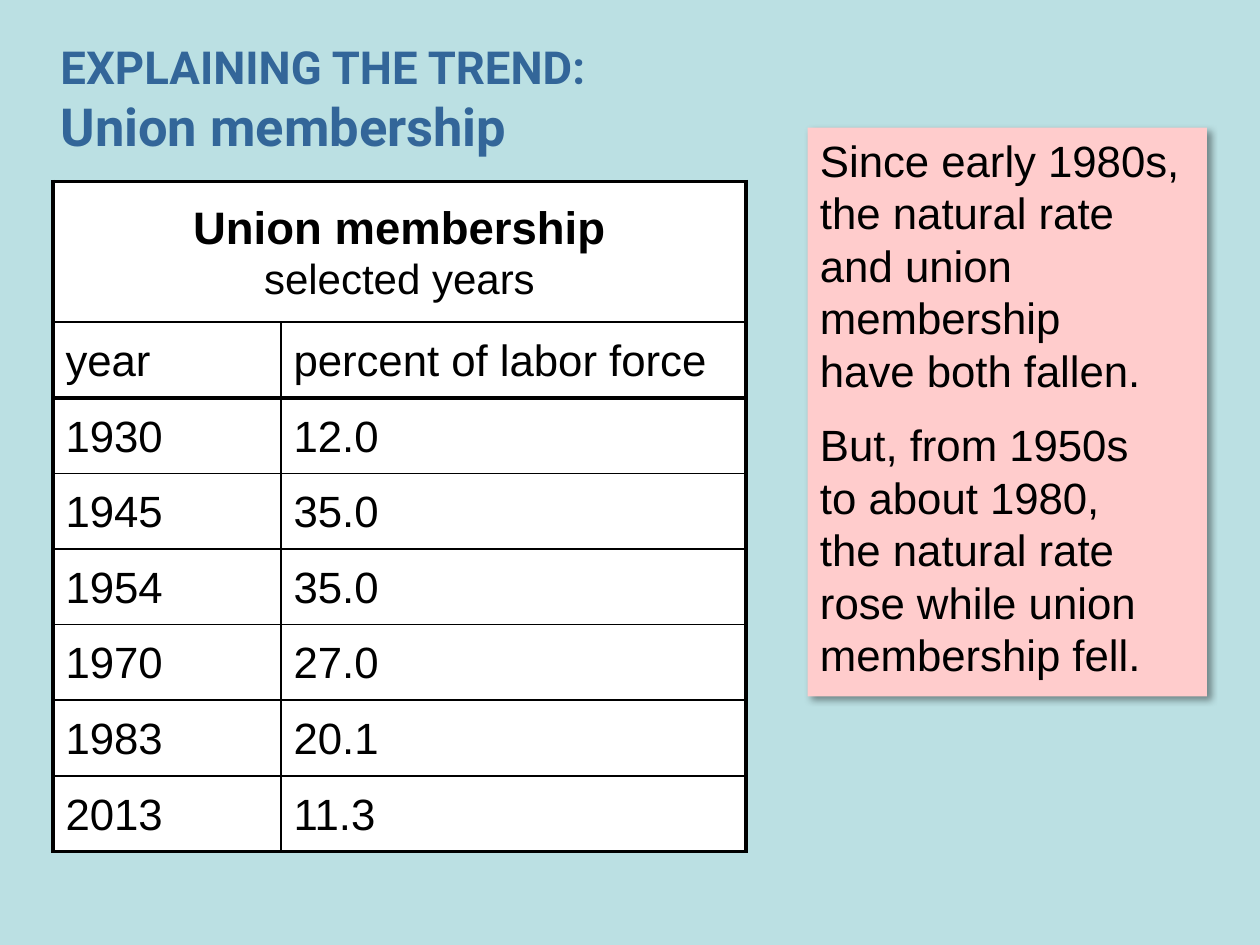
from lxml.etree import SubElement
from pptx import Presentation
from pptx.dml.color import RGBColor
from pptx.enum.shapes import MSO_SHAPE
from pptx.enum.text import MSO_ANCHOR, PP_ALIGN
from pptx.oxml import parse_xml
from pptx.oxml.ns import nsdecls, qn
from pptx.util import Inches, Pt

SLIDE_WIDTH = Inches(10)
SLIDE_HEIGHT = Inches(7.5)
BACKGROUND = RGBColor(0xBB, 0xE0, 0xE3)
TITLE_BLUE = RGBColor(0x33, 0x66, 0x99)
PINK = RGBColor(0xFF, 0xCC, 0xCC)
WHITE = RGBColor(0xFF, 0xFF, 0xFF)
BLACK = RGBColor(0, 0, 0)

THIN = 1
THICK = 2.25
BODY_SIZE = 25
TABLE_SPACING = {"line_spacing": 1.05, "space_before": 11.25}
COMMENT_SPACING = {"line_spacing": 1.0, "space_before": 12.5}

TITLE = "EXPLAINING THE TREND:\nUnion membership"
TABLE_HEADING = "Union membership\nselected years"
TABLE_ROWS = [
    ("year", "percent of labor force"),
    ("1930", "12.0"),
    ("1945", "35.0"),
    ("1954", "35.0"),
    ("1970", "27.0"),
    ("1983", "20.1"),
    ("2013", "11.3"),
]
COMMENTS = [
    "Since early 1980s, the natural rate and union membership\nhave both fallen.",
    "But, from 1950s\nto about 1980,\nthe natural rate rose while union membership fell.",
]


def across(percent):
    return round(SLIDE_WIDTH * percent / 100)


def down(percent):
    return round(SLIDE_HEIGHT * percent / 100)


def area(left, top, width, height):
    return across(left), down(top), across(width), down(height)


def format_span(span, size, font="Arial", color=BLACK, bold=False):
    span.font.size = Pt(size)
    span.font.name = font
    span.font.color.rgb = color
    span.font.bold = bold


def format_body(para, line_spacing, space_before):
    para.line_spacing = line_spacing
    para.space_before = Pt(space_before)
    for span in para.runs:
        format_span(span, BODY_SIZE)


def add_title(page):
    title = page.shapes.title
    title.left, title.top, title.width, title.height = area(4.8, 2.8, 88.1, 15.2)
    frame = title.text_frame
    frame.margin_left = frame.margin_right = frame.margin_top = frame.margin_bottom = 0
    frame.vertical_anchor = MSO_ANCHOR.MIDDLE
    para = frame.paragraphs[0]
    para.text = TITLE
    para.alignment = PP_ALIGN.LEFT
    for span, size in zip(para.runs, (26, 30)):
        format_span(span, size, "Roboto", TITLE_BLUE, True)


def add_shadow(box):
    box.shadow.inherit = False
    effects = box._element.spPr.find(qn("a:effectLst"))
    effects.append(parse_xml(
        f'<a:outerShdw {nsdecls("a")} blurRad="{Pt(4)}" dist="{Pt(3)}" '
        'dir="2700000" algn="tl" rotWithShape="0">'
        '<a:srgbClr val="000000"><a:alpha val="40000"/></a:srgbClr></a:outerShdw>'
    ))


def add_comment_box(page):
    box = page.shapes.add_shape(MSO_SHAPE.RECTANGLE, *area(64.1, 13.5, 31.7, 60.2))
    box.fill.solid()
    box.fill.fore_color.rgb = PINK
    box.line.fill.background()
    add_shadow(box)
    frame = box.text_frame
    frame.word_wrap = True
    frame.vertical_anchor = MSO_ANCHOR.TOP
    for index, comment in enumerate(COMMENTS):
        para = frame.add_paragraph() if index else frame.paragraphs[0]
        para.text = comment
        para.alignment = PP_ALIGN.LEFT
        format_body(para, **COMMENT_SPACING)


def set_borders(cell, left, right, top, bottom):
    properties = cell._tc.get_or_add_tcPr()
    sides = zip(("a:lnL", "a:lnR", "a:lnT", "a:lnB"), (left, right, top, bottom))
    for side, width in sides:
        line = SubElement(properties, qn(side), w=str(Pt(width)))
        fill = SubElement(line, qn("a:solidFill"))
        SubElement(fill, qn("a:srgbClr"), val=str(BLACK))


def format_cell(cell, row, column, last_row):
    set_borders(
        cell,
        THICK if column == 0 else THIN,
        THICK if column == 1 or row == 0 else THIN,
        THICK if row in (0, 2) else THIN,
        THICK if row in (1, last_row) else THIN,
    )
    cell.fill.solid()
    cell.fill.fore_color.rgb = WHITE
    cell.vertical_anchor = MSO_ANCHOR.MIDDLE


def add_heading(table):
    heading = table.cell(0, 0)
    heading.merge(table.cell(0, 1))
    para = heading.text_frame.paragraphs[0]
    para.text = TABLE_HEADING
    para.alignment = PP_ALIGN.CENTER
    format_body(para, **TABLE_SPACING)
    for span, size, bold in zip(para.runs, (26, 24), (True, False)):
        format_span(span, size, bold=bold)


def add_membership_table(page):
    last_row = len(TABLE_ROWS)
    frame = page.shapes.add_table(last_row + 1, 2, *area(4.2, 19.2, 55, 70.8))
    table = frame.table
    table.first_row = table.horz_banding = False
    for column, share in zip(table.columns, (18.1, 36.9)):
        column.width = across(share)
    for index, row in enumerate(table.rows):
        row.height = down(8 if index else 14.9)
        for column, cell in enumerate(row.cells):
            format_cell(cell, index, column, last_row)
    add_heading(table)
    for index, values in enumerate(TABLE_ROWS, start=1):
        for column, value in enumerate(values):
            para = table.cell(index, column).text_frame.paragraphs[0]
            para.text = value
            format_body(para, **TABLE_SPACING)


def main():
    deck = Presentation()
    deck.slide_width = SLIDE_WIDTH
    deck.slide_height = SLIDE_HEIGHT
    page = deck.slides.add_slide(deck.slide_layouts[5])
    page.background.fill.solid()
    page.background.fill.fore_color.rgb = BACKGROUND
    add_title(page)
    add_comment_box(page)
    add_membership_table(page)
    deck.save("out.pptx")


if __name__ == "__main__":
    main()
